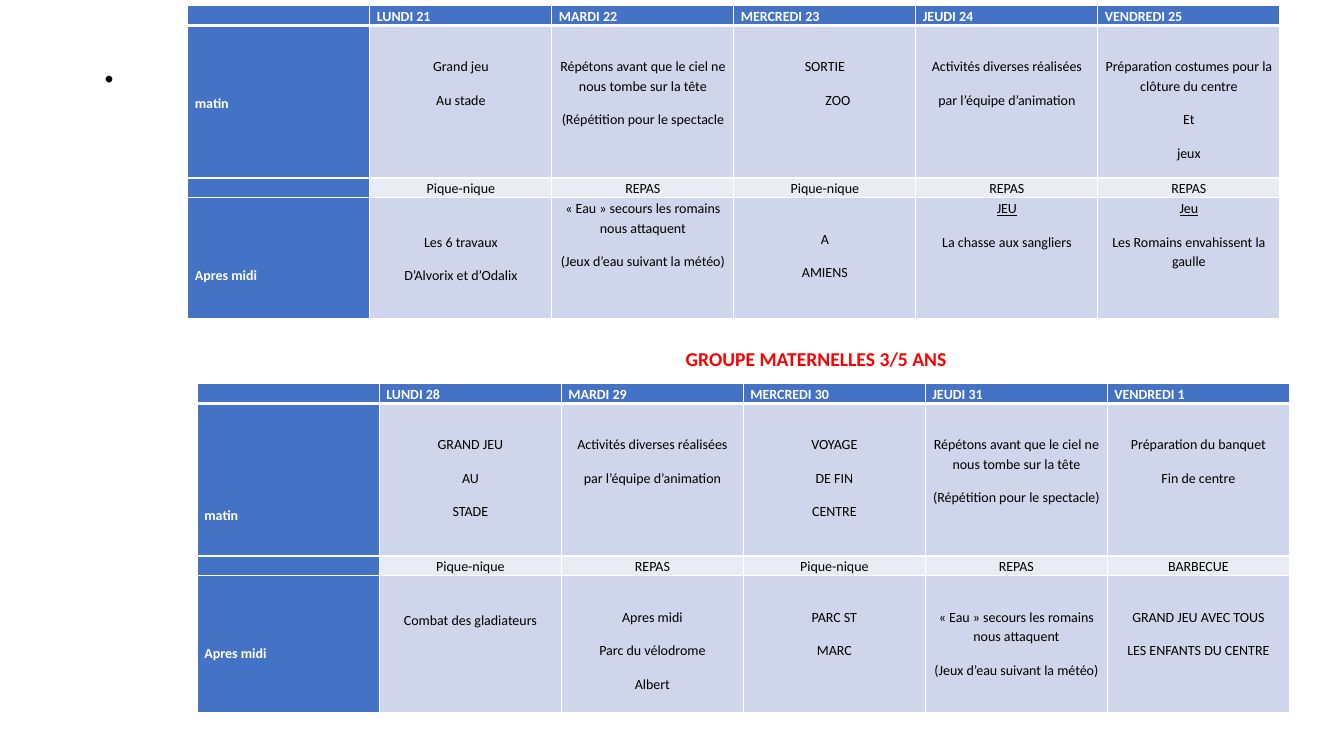
"""Build the two-week activity timetable slide of a holiday centre."""
from dataclasses import dataclass

from lxml.etree import SubElement
from pptx import Presentation
from pptx.dml.color import RGBColor as Rgb
from pptx.enum.text import MSO_ANCHOR as Anchor, PP_ALIGN as Align
from pptx.oxml.ns import qn
from pptx.slide import Slide
from pptx.table import _Cell as TableCell
from pptx.text.text import _Paragraph as Paragraph
from pptx.util import Pt


@dataclass(frozen=True)
class Theme:
    font: str = "Calibri"
    title_size: float = 39.6
    group_size: float = 14
    cell_size: float = 10
    black: str = "000000"
    white: str = "FFFFFF"
    red: str = "FF0000"
    label_fill: str = "4472C4"
    activity_fill: str = "CFD5EA"
    meal_fill: str = "E9EBF5"
    thin: float = 1
    thick: float = 3


@dataclass(frozen=True)
class Slot:
    lines: tuple[str, ...] = ()
    lead: float = 21.8
    underline_first: bool = False
    last_indent: float = 0


@dataclass(frozen=True)
class Week:
    left: float
    top: float
    heights: tuple[float, ...]
    days: tuple[str, ...]
    morning: tuple[Slot, ...]
    meals: tuple[str, ...]
    afternoon: tuple[Slot, ...]

    def rows(self) -> list[tuple[Slot, ...]]:
        return [
            (Slot(), *(Slot((day,), 0) for day in self.days)),
            self.morning,
            (Slot(), *(Slot((meal,), 0) for meal in self.meals)),
            self.afternoon,
        ]


THEME = Theme()
COLUMN_WIDTH = 130
SIDE_INSET = 5.04
LINE_STEP = 24

REHEARSAL = "Répétons avant que le ciel ne nous tombe sur la tête"
VARIED = Slot(("Activités diverses réalisées", "par l’équipe d’animation"))
WATER = ("« Eau » secours les romains nous attaquent", "(Jeux d’eau suivant la météo)")

WEEKS = (
    Week(
        134.2, 4, (14.2, 109, 14.2, 86),
        ("LUNDI 21", "MARDI 22", "MERCREDI 23", "JEUDI 24", "VENDREDI 25"),
        (
            Slot(("matin",), 2 * LINE_STEP),
            Slot(("Grand jeu", "Au stade")),
            Slot((REHEARSAL, "(Répétition pour le spectacle")),
            Slot(("SORTIE", "ZOO"), last_indent=18.6),
            VARIED,
            Slot(("Préparation costumes pour la clôture du centre", "Et", "jeux")),
        ),
        ("Pique-nique", "REPAS", "Pique-nique", "REPAS", "REPAS"),
        (
            Slot(("Apres midi",), 2 * LINE_STEP),
            Slot(("Les 6 travaux", "D’Alvorix et d’Odalix"), LINE_STEP),
            Slot(WATER, 0),
            Slot(("A", "AMIENS")),
            Slot(("JEU", "La chasse aux sangliers"), 0, underline_first=True),
            Slot(("Jeu", "Les Romains envahissent la gaulle"), 0, underline_first=True),
        ),
    ),
    Week(
        141, 274, (14.2, 109, 14.2, 98),
        ("LUNDI 28", "MARDI 29", "MERCREDI 30", "JEUDI 31", "VENDREDI 1"),
        (
            Slot(("matin",), 3 * LINE_STEP),
            Slot(("GRAND JEU", "AU", "STADE")),
            VARIED,
            Slot(("VOYAGE", "DE FIN", "CENTRE")),
            Slot((REHEARSAL, "(Répétition pour le spectacle)")),
            Slot(("Préparation du banquet", "Fin de centre")),
        ),
        ("Pique-nique", "REPAS", "Pique-nique", "REPAS", "BARBECUE"),
        (
            Slot(("Apres midi",), 2 * LINE_STEP),
            Slot(("Combat des gladiateurs",), LINE_STEP),
            Slot(("Apres midi", "Parc du vélodrome", "Albert")),
            Slot(("PARC ST", "MARC")),
            Slot(WATER),
            Slot(("GRAND JEU AVEC TOUS", "LES ENFANTS DU CENTRE")),
        ),
    ),
)


def set_font(paragraph: Paragraph, size: float, color: str, bold: bool) -> None:
    font = paragraph.font
    font.name, font.size, font.bold = THEME.font, Pt(size), bold
    font.color.rgb = Rgb.from_string(color)


def add_borders(cell: TableCell, row: int) -> None:
    properties = cell._tc.get_or_add_tcPr()
    widths = {
        "a:lnL": THEME.thin,
        "a:lnR": THEME.thin,
        "a:lnT": THEME.thick if row == 1 else THEME.thin,
        "a:lnB": THEME.thick if row == 0 else THEME.thin,
    }
    for side, width in widths.items():
        border = SubElement(properties, qn(side), w=str(Pt(width)))
        SubElement(SubElement(border, qn("a:solidFill")), qn("a:srgbClr"), val=THEME.white)


def fill_cell(cell: TableCell, slot: Slot, row: int, column: int) -> None:
    is_label = row == 0 or column == 0
    add_borders(cell, row)
    cell.fill.solid()
    cell.fill.fore_color.rgb = Rgb.from_string(
        THEME.label_fill if is_label else THEME.meal_fill if row == 2 else THEME.activity_fill
    )
    cell.margin_left = cell.margin_right = Pt(SIDE_INSET)
    cell.margin_top = Pt(slot.lead if slot.lines else 0)
    cell.margin_bottom = 0
    cell.vertical_anchor = Anchor.TOP
    frame = cell.text_frame
    if not slot.lines:
        SubElement(frame.paragraphs[0]._p, qn("a:endParaRPr"), sz=str(THEME.cell_size * 100))
        return
    frame.text = "\n".join(slot.lines)
    for paragraph in frame.paragraphs:
        paragraph.alignment = Align.LEFT if is_label else Align.CENTER
        paragraph.line_spacing = 1.15
        paragraph.space_after = Pt(10)
        set_font(paragraph, THEME.cell_size, THEME.white if is_label else THEME.black, is_label)
    if slot.underline_first:
        frame.paragraphs[0].font.underline = True
    if slot.last_indent:
        frame.paragraphs[-1]._p.get_or_add_pPr().set("marL", str(Pt(slot.last_indent)))


def add_week(slide: Slide, week: Week) -> None:
    rows = week.rows()
    columns = len(rows[0])
    timetable = slide.shapes.add_table(
        len(rows), columns, Pt(week.left), Pt(week.top),
        Pt(COLUMN_WIDTH * columns), Pt(sum(week.heights)),
    ).table
    timetable.horz_banding = False
    for column in timetable.columns:
        column.width = Pt(COLUMN_WIDTH)
    for row, (slots, height) in enumerate(zip(rows, week.heights)):
        timetable.rows[row].height = Pt(height)
        for column, slot in enumerate(slots):
            fill_cell(timetable.cell(row, column), slot, row, column)


def add_title(slide: Slide) -> None:
    title = slide.shapes.title
    title.left, title.top, title.width, title.height = Pt(66.2), Pt(28.8), Pt(21.6), Pt(34.6)
    title.text_frame.text = "."
    title.text_frame.vertical_anchor = Anchor.MIDDLE
    paragraph = title.text_frame.paragraphs[0]
    paragraph.alignment, paragraph.line_spacing = Align.LEFT, 0.9
    set_font(paragraph, THEME.title_size, THEME.black, False)


def add_group_name(slide: Slide) -> None:
    group = slide.shapes.add_textbox(Pt(103), Pt(238.3), Pt(960), Pt(36))
    group.text_frame.text = "GROUPE MATERNELLES 3/5 ANS"
    group.text_frame.word_wrap = False
    group.text_frame.vertical_anchor = Anchor.MIDDLE
    paragraph = group.text_frame.paragraphs[0]
    paragraph.alignment = Align.CENTER
    set_font(paragraph, THEME.group_size, THEME.red, True)


def main() -> None:
    deck = Presentation()
    deck.slide_width, deck.slide_height = Pt(960), Pt(540)
    slide = deck.slides.add_slide(deck.slide_layouts[5])
    add_title(slide)
    for week in WEEKS:
        add_week(slide, week)
    add_group_name(slide)
    deck.save("out.pptx")


if __name__ == "__main__":
    main()
